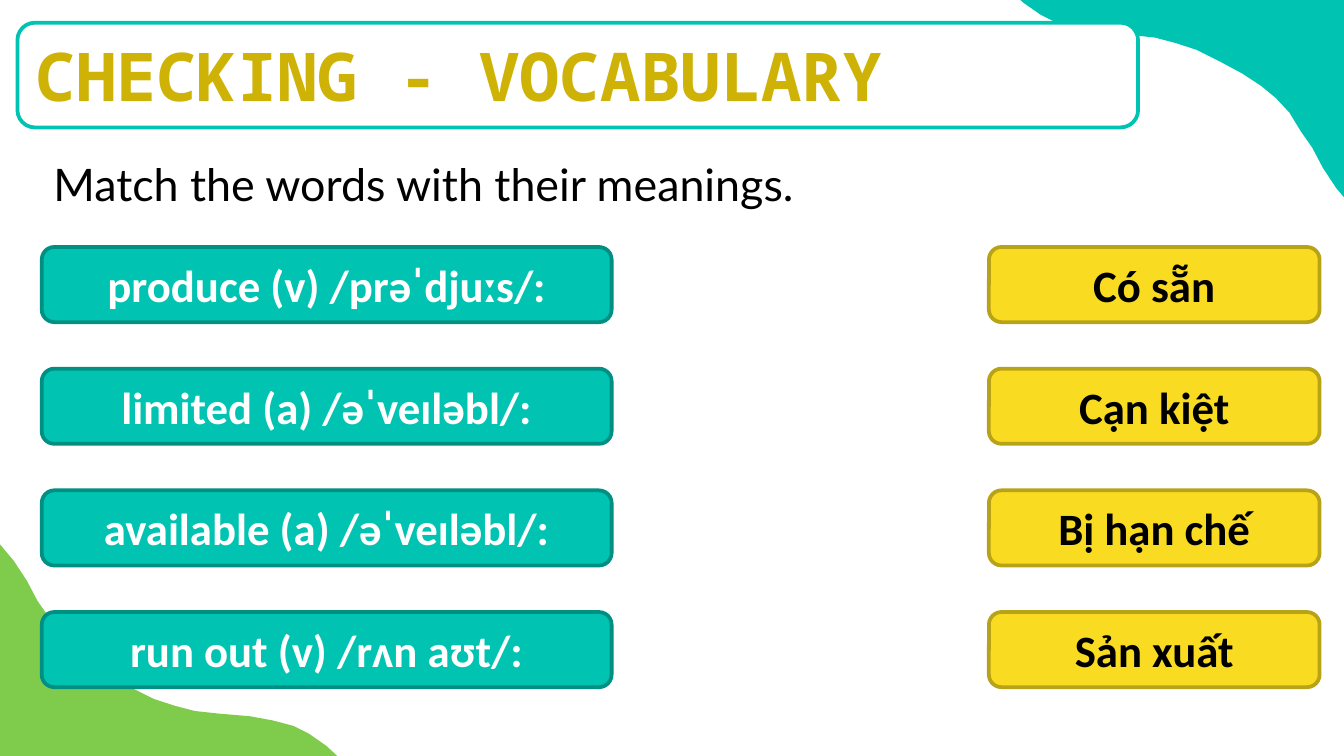
from pptx import Presentation
from pptx.dml.color import RGBColor
from pptx.enum.shapes import MSO_SHAPE
from pptx.enum.text import MSO_ANCHOR, MSO_AUTO_SIZE, PP_ALIGN
from pptx.util import Cm, Pt

ROUNDED = MSO_SHAPE.ROUNDED_RECTANGLE
MIDDLE = MSO_ANCHOR.MIDDLE
GROW = MSO_AUTO_SIZE.SHAPE_TO_FIT_TEXT
LEFT, CENTER = PP_ALIGN.LEFT, PP_ALIGN.CENTER

TEAL, GREEN, YELLOW = "00C3B1", "7FCB4C", "F9DC21"
WHITE, BLACK = "FFFFFF", "000000"

# Wavy corner outline, in hundredths of a centimetre
WAVE = [
    (445, 0), (478, 30), (518, 71), (544, 102), (569, 140), (589, 178),
    (610, 208), (632, 244), (658, 272), (686, 295), (721, 318), (762, 340),
    (808, 363), (848, 376), (886, 386), (932, 391), (991, 396), (1034, 404),
    (1072, 414), (1102, 429), (1135, 452), (1163, 478), (1189, 508),
    (1209, 549), (1224, 592), (1229, 643), (1229, 721), (1237, 800),
    (1257, 861), (1290, 909), (1354, 973), (0, 973), (0, 0),
]

PAIRS = [
    ("produce (v) /prəˈdjuːs/:", "Có sẵn"),
    ("limited (a) /əˈveɪləbl/:", "Cạn kiệt"),
    ("available (a) /əˈveɪləbl/:", "Bị hạn chế"),
    ("run out (v) /rʌn aʊt/:", "Sản xuất"),
]


def rgb(value):
    return RGBColor.from_string(value)


def add_panel(box, fill, outline, text, font_name, size, color, align):
    """Add a rounded box, given as left, top, width, height in cm, with bold text."""
    panel = slide.shapes.add_shape(ROUNDED, *map(Cm, box))
    panel.shadow.inherit = False
    panel.fill.solid()
    panel.fill.fore_color.rgb = rgb(fill)
    panel.line.color.rgb = rgb(outline)
    panel.line.width = Pt(2)
    frame = panel.text_frame
    frame.word_wrap = True
    frame.auto_size = GROW
    frame.vertical_anchor = MIDDLE
    paragraph = frame.paragraphs[0]
    paragraph.text = text
    paragraph.alignment = align
    paragraph.font.name = font_name
    paragraph.font.size = Pt(size)
    paragraph.font.bold = True
    paragraph.font.color.rgb = rgb(color)


prs = Presentation()
prs.slide_width, prs.slide_height = Cm(25.4), Cm(14.29)
slide = prs.slides.add_slide(prs.slide_layouts[6])

# Corner waves: the same outline, turned round for the top right
for left, top, rotation, color in [
    (-5.18, 9.58, 0, GREEN),
    (17.15, -5.16, 180, TEAL),
]:
    outline = slide.shapes.build_freeform(*WAVE[0], scale=Cm(0.01))
    outline.add_line_segments(WAVE[1:], close=True)
    wave = outline.convert_to_shape()
    wave.left, wave.top, wave.rotation = Cm(left), Cm(top), rotation
    wave.shadow.inherit = False
    wave.fill.solid()
    wave.fill.fore_color.rgb = rgb(color)
    wave.line.fill.background()

# Title
add_panel((0.33, 0.43, 21.18, 1.98), WHITE, TEAL, "CHECKING - VOCABULARY",
          "Noto Sans Mono", 36, "CEB306", LEFT)

# Words and meanings to match
for row, (word, meaning) in enumerate(PAIRS):
    top = 4.67 + 2.3 * row
    add_panel((0.79, top, 10.77, 1.42), TEAL, "009083", word,
              "Calibri", 24, WHITE, CENTER)
    add_panel((18.69, top, 6.25, 1.42), YELLOW, "B8A318", meaning,
              "Calibri", 24, BLACK, CENTER)

# Instruction
instruction = slide.shapes.add_textbox(Cm(0.76), Cm(2.84), Cm(17.93), Cm(1.27))
instruction.text_frame.word_wrap = True
instruction.text_frame.auto_size = GROW
sentence = instruction.text_frame.paragraphs[0]
sentence.text = "Match the words with their meanings."
sentence.font.name = "Lato"
sentence.font.size = Pt(24)
sentence.font.color.rgb = rgb(BLACK)

prs.save("out.pptx")
